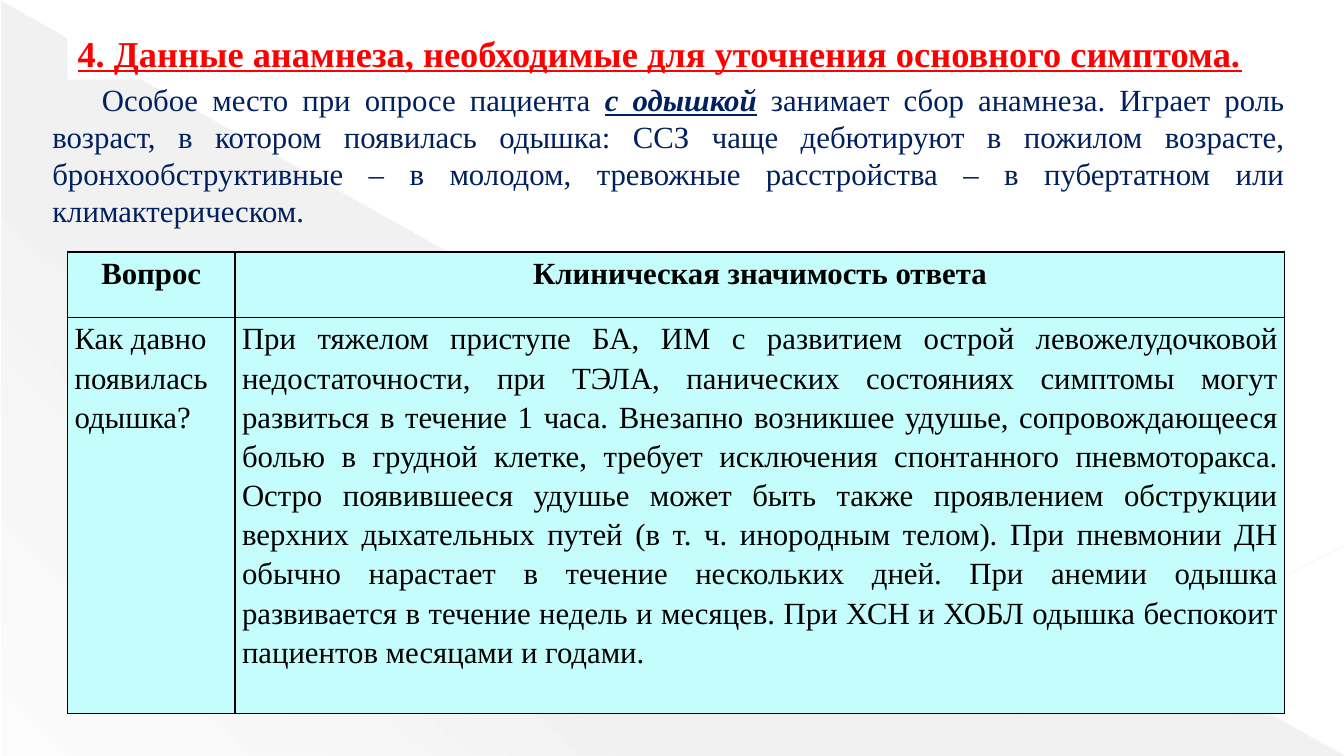
import lxml.etree
import pptx
import pptx.dml.color
import pptx.enum.shapes
import pptx.enum.text
import pptx.oxml
import pptx.oxml.ns
import pptx.util

Cm = pptx.util.Cm
Pt = pptx.util.Pt
Align = pptx.enum.text.PP_ALIGN
Anchor = pptx.enum.text.MSO_ANCHOR
FONT = "Times New Roman"
BLACK, WHITE, RED, NAVY, CYAN = "000000", "FFFFFF", "FF0000", "002060", "C5FDFD"

HEADING = "4. Данные анамнеза, необходимые для уточнения основного симптома."
INTRO = [
    ("Особое место при опросе пациента ", {}),
    ("с одышкой", {"bold": True, "italic": True, "underline": True}),
    (" занимает сбор анамнеза. Играет роль возраст, в котором появилась одышка: "
     "ССЗ чаще дебютируют в пожилом возрасте, бронхообструктивные – в молодом, "
     "тревожные расстройства – в пубертатном или климактерическом.", {}),
]
QUESTION = "Как давно появилась одышка?"
ANSWER = (
    "При тяжелом приступе БА, ИМ с развитием острой левожелудочковой недостаточности, "
    "при ТЭЛА, панических состояниях симптомы могут развиться в течение 1 часа. "
    "Внезапно возникшее удушье, сопровождающееся болью в грудной клетке, требует "
    "исключения спонтанного пневмоторакса. Остро появившееся удушье может быть также "
    "проявлением обструкции верхних дыхательных путей (в т. ч. инородным телом). "
    "При пневмонии ДН обычно нарастает в течение нескольких дней. При анемии одышка "
    "развивается в течение недель и месяцев. При ХСН и ХОБЛ одышка беспокоит пациентов "
    "месяцами и годами."
)
# Each cell: text, alignment, bold
ROWS = [
    [("Вопрос", Align.CENTER, True), ("Клиническая значимость ответа", Align.CENTER, True)],
    [(QUESTION, Align.LEFT, False), (ANSWER, Align.JUSTIFY, False)],
]


def rgb(value):
    return pptx.dml.color.RGBColor.from_string(value)


def xml(markup):
    """Parse one element whose opening tag has room for the a: namespace."""
    tag, rest = markup.split(" ", 1)
    return pptx.oxml.parse_xml(f"{tag} {pptx.oxml.ns.nsdecls('a')} {rest}")


def write(paragraph, text, size=22, color=BLACK, bold=False, italic=False, underline=False):
    run = paragraph.add_run()
    run.text = text
    font = run.font
    font.name, font.size = FONT, Pt(size)
    font.bold, font.italic, font.underline = bold, italic, underline
    font.color.rgb = rgb(color)


def add_backdrop_line(slide, start, end, color, width, opacity):
    line = slide.shapes.add_connector(
        pptx.enum.shapes.MSO_CONNECTOR.STRAIGHT, *map(Cm, start + end))
    line.line.width = Pt(width)
    line.line.color.rgb = rgb(color)
    properties = line._element.spPr
    hue = properties.find(".//" + pptx.oxml.ns.qn("a:srgbClr"))
    hue.append(xml(f'<a:alpha val="{opacity * 1000}"/>'))
    lxml.etree.SubElement(properties, pptx.oxml.ns.qn("a:effectLst"))


def add_backdrop(slide, width, height):
    wedge = slide.shapes.add_shape(
        pptx.enum.shapes.MSO_SHAPE.RIGHT_TRIANGLE, Cm(0.03), Cm(0.05), Cm(width - 0.05), Cm(height - 0.05))
    wedge.shadow.inherit = False
    wedge.line.fill.background()
    stops = "".join(
        f'<a:gs pos="{position * 1000}"><a:srgbClr val="666666">'
        f'<a:alpha val="{opacity * 1000}"/></a:srgbClr></a:gs>'
        for position, opacity in ((0, 10), (70, 8), (100, 1)))
    fade = xml(f'<a:gradFill rotWithShape="1"><a:gsLst>{stops}</a:gsLst>'
               f'<a:lin ang="{133 * 60000}" scaled="0"/></a:gradFill>')
    wedge._element.spPr.find(pptx.oxml.ns.qn("a:prstGeom")).addnext(fade)

    add_backdrop_line(slide, (0, 0.03), (width - 0.03, height - 0.03), "E8E8E8", 0.39, 35)
    add_backdrop_line(slide, (width, 13.74), (23.95, height - 0.03), "EAEAEA", 0.47, 45)


def set_heading(slide, left, top, width, height):
    heading = slide.shapes.title
    slide.shapes._spTree.append(heading._element)  # in front of the backdrop
    heading.left, heading.top, heading.width, heading.height = map(Cm, (left, top, width, height))
    heading.fill.solid()
    heading.fill.fore_color.rgb = rgb(WHITE)
    frame = heading.text_frame
    frame.word_wrap = True
    frame.auto_size = pptx.enum.text.MSO_AUTO_SIZE.NONE
    frame.vertical_anchor = Anchor.MIDDLE
    paragraph = frame.paragraphs[0]
    paragraph.alignment = Align.JUSTIFY
    paragraph.line_spacing = 1.0
    paragraph.space_before = Pt(0)
    write(paragraph, HEADING, size=26, color=RED, bold=True, underline=True)


def add_intro(slide, left, top, width, height):
    frame = slide.shapes.add_textbox(*map(Cm, (left, top, width, height))).text_frame
    frame.word_wrap = True
    frame.vertical_anchor = Anchor.MIDDLE
    paragraph = frame.paragraphs[0]
    paragraph.alignment = Align.JUSTIFY
    paragraph._p.get_or_add_pPr().set("indent", str(Cm(1.25)))
    for text, emphasis in INTRO:
        write(paragraph, text, color=NAVY, **emphasis)


def fill_cell(cell, text, alignment, bold):
    cell.margin_left = cell.margin_right = Cm(0.18)
    cell.margin_top = cell.margin_bottom = 0
    paragraph = cell.text_frame.paragraphs[0]
    paragraph.alignment = alignment
    paragraph.line_spacing = 1.15
    write(paragraph, text, bold=bold)
    properties = cell._tc.get_or_add_tcPr()
    for side in ("lnL", "lnR", "lnT", "lnB"):
        properties.append(xml(
            f'<a:{side} w="{Pt(1)}"><a:solidFill><a:srgbClr val="{BLACK}"/></a:solidFill></a:{side}>'))
    cell.fill.solid()
    cell.fill.fore_color.rgb = rgb(CYAN)


def add_question_table(slide, left, top, width, height, question_width=4.22, header_height=1.65):
    table = slide.shapes.add_table(
        len(ROWS), len(ROWS[0]), *map(Cm, (left, top, width, height))).table
    table.horz_banding = False
    for column, size in zip(table.columns, (question_width, width - question_width)):
        column.width = Cm(size)
    for row, size in zip(table.rows, (header_height, height - header_height)):
        row.height = Cm(size)
    for row, contents in zip(table.rows, ROWS):
        for cell, content in zip(row.cells, contents):
            fill_cell(cell, *content)


def main():
    width, height = 33.87, 19.05
    deck = pptx.Presentation()
    deck.slide_width, deck.slide_height = Cm(width), Cm(height)
    slide = deck.slides.add_slide(deck.slide_layouts.get_by_name("Title Only"))
    add_backdrop(slide, width, height)
    set_heading(slide, 1.7, 0.64, 30.1, 1.37)
    add_intro(slide, 1.07, 1.9, 31.55, 4.01)
    add_question_table(slide, 1.7, 6.35, 30.68, 11.63)
    deck.save("out.pptx")


if __name__ == "__main__":
    main()
